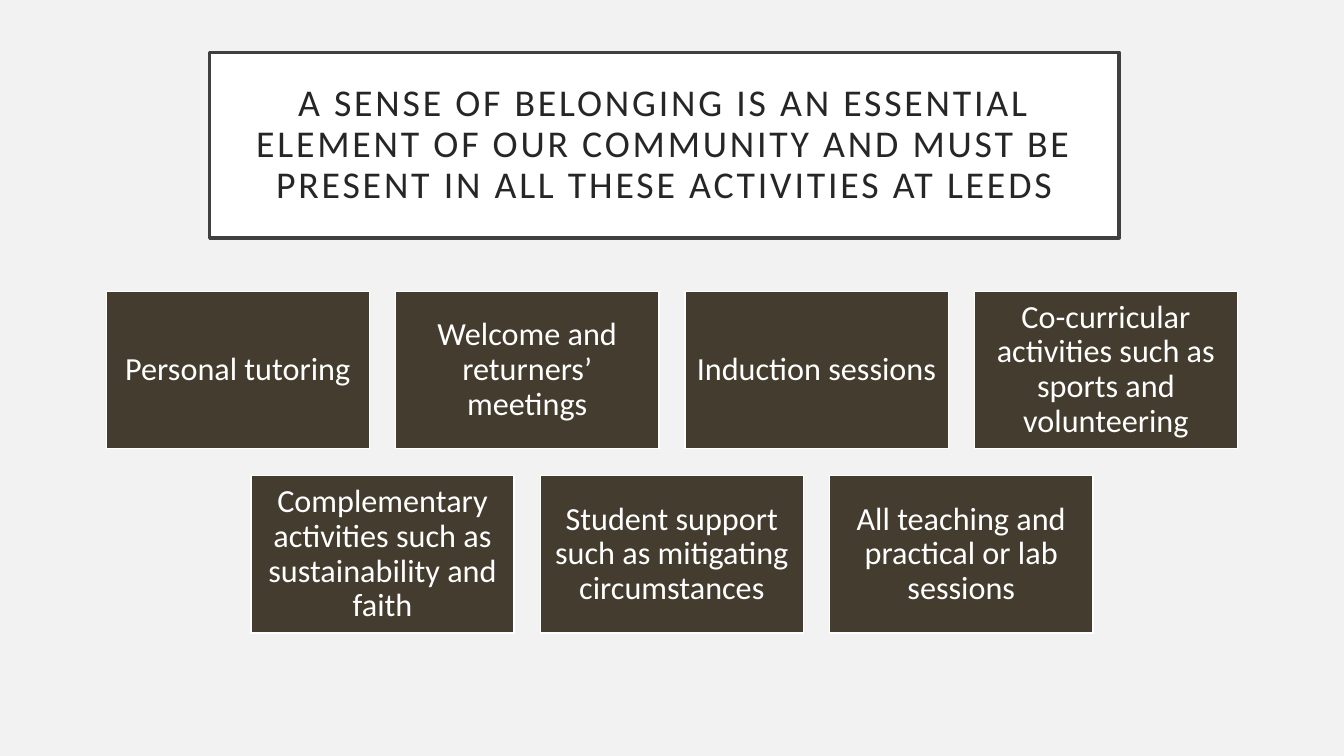
from pptx import Presentation
from pptx.dml.color import RGBColor
from pptx.enum.shapes import MSO_SHAPE as Shape
from pptx.enum.text import MSO_ANCHOR as Anchor, PP_ALIGN as Align
from pptx.util import Inches, Pt

SLIDE_WIDTH, SLIDE_HEIGHT = 13.33, 7.5
CARD_WIDTH, CARD_HEIGHT, CARD_GAP = 2.61, 1.56, 0.26
ROWS_TOP, ROW_STEP = 2.89, 1.83

TITLE = ("A SENSE OF BELONGING IS AN ESSENTIAL ELEMENT OF OUR COMMUNITY "
         "AND MUST BE PRESENT IN ALL THESE ACTIVITIES AT LEEDS")
ACTIVITY_ROWS = [
    ["Personal tutoring", "Welcome and returners’ meetings", "Induction sessions",
     "Co-curricular activities such as sports and volunteering"],
    ["Complementary activities such as sustainability and faith",
     "Student support such as mitigating circumstances",
     "All teaching and practical or lab sessions"],
]


def color(value):
    return RGBColor.from_string(value)


class Deck:
    font_name = "Calibri"
    title_style = dict(fill="FFFFFF", line="404040", weight=2.5,
                       text="262626", size=27, margin=0.2, tracking=200)
    card_style = dict(fill="443C2E", line="FFFFFF", weight=1,
                      text="FFFFFF", size=23, margin=0.1, tracking=0)

    def __init__(self):
        self.presentation = Presentation()
        self.presentation.slide_width = Inches(SLIDE_WIDTH)
        self.presentation.slide_height = Inches(SLIDE_HEIGHT)
        self.slide = self.presentation.slides.add_slide(self.presentation.slide_layouts[6])
        background = self.slide.background.fill
        background.solid()
        background.fore_color.rgb = color("F2F2F2")

    def box(self, wording, left, top, width, height, style):
        panel = self.slide.shapes.add_shape(
            Shape.RECTANGLE, *map(Inches, (left, top, width, height)))
        panel.shadow.inherit = False
        panel.fill.solid()
        panel.fill.fore_color.rgb = color(style["fill"])
        panel.line.color.rgb = color(style["line"])
        panel.line.width = Pt(style["weight"])

        frame = panel.text_frame
        margin = Inches(style["margin"])
        frame_format = dict(word_wrap=True, vertical_anchor=Anchor.MIDDLE,
                            margin_left=margin, margin_right=margin,
                            margin_top=margin, margin_bottom=margin)
        for attribute, value in frame_format.items():
            setattr(frame, attribute, value)

        paragraph = frame.paragraphs[0]
        paragraph.alignment = Align.CENTER
        paragraph.line_spacing = 0.9
        run = paragraph.add_run()
        run.text = wording
        for attribute, value in dict(name=self.font_name, size=Pt(style["size"])).items():
            setattr(run.font, attribute, value)
        run.font.color.rgb = color(style["text"])
        if style["tracking"]:
            run._r.get_or_add_rPr().set("spc", str(style["tracking"]))

    def title(self, wording):
        self.box(wording, 2.08, 0.52, 9.02, 1.84, self.title_style)

    def card_row(self, activities, top):
        step = CARD_WIDTH + CARD_GAP
        left = (SLIDE_WIDTH - len(activities) * step + CARD_GAP) / 2
        for column, activity in enumerate(activities):
            self.box(activity, left + column * step, top,
                     CARD_WIDTH, CARD_HEIGHT, self.card_style)


def main():
    deck = Deck()
    deck.title(TITLE)
    for row, activities in enumerate(ACTIVITY_ROWS):
        deck.card_row(activities, ROWS_TOP + row * ROW_STEP)
    deck.presentation.save("out.pptx")


if __name__ == "__main__":
    main()
